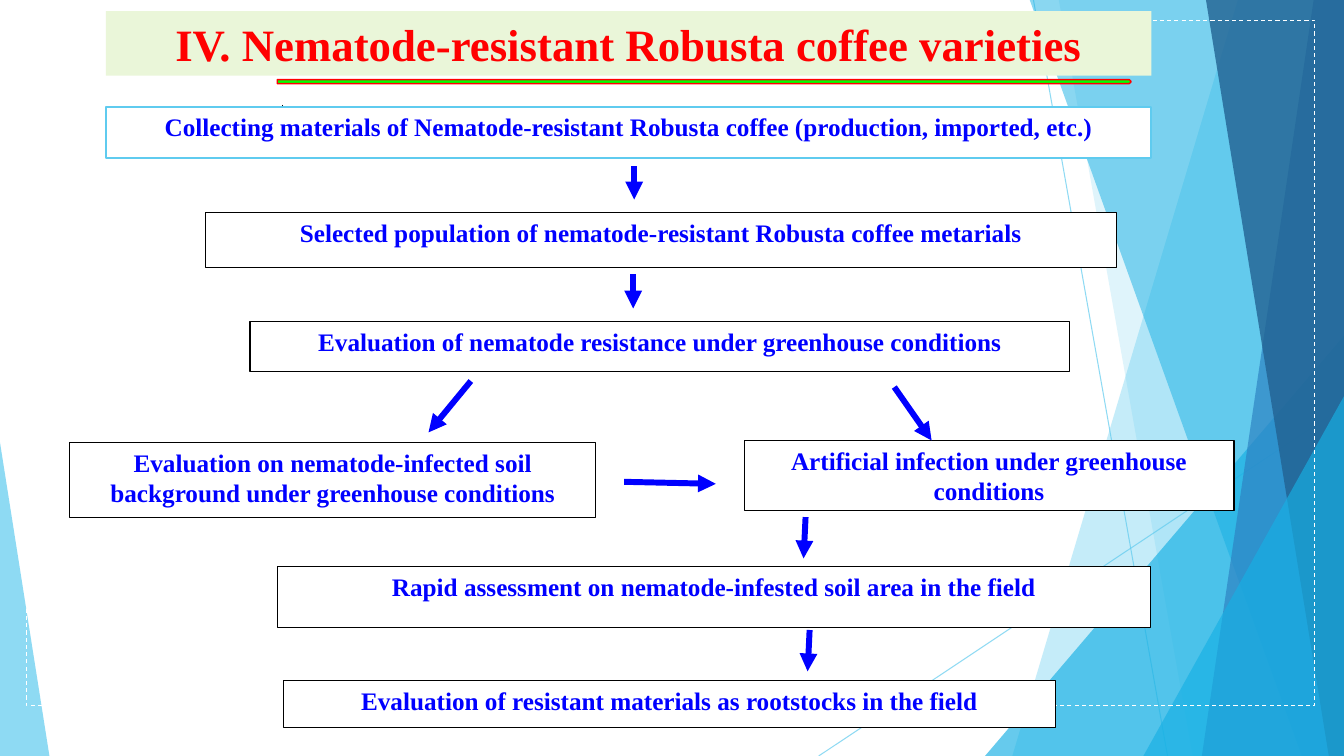
from dataclasses import dataclass
from typing import Optional

import lxml.etree
import pptx
import pptx.dml.color
import pptx.enum.dml
import pptx.enum.shapes
import pptx.enum.text
import pptx.oxml.ns
import pptx.util

Inches = pptx.util.Inches
SHAPES = pptx.enum.shapes.MSO_SHAPE
ANCHOR = pptx.enum.text.MSO_ANCHOR

COLORS = {
    "white": "FFFFFF", "black": "000000", "red": "FF0000", "green": "00FF00",
    "blue": "0000FF", "pale_green": "EAF6D9", "sky": "5FCBEF",
    "cyan": "17B0E4", "steel": "2E83C3", "navy": "226292",
}
WIDTH, HEIGHT = 13.33, 7.5
TOP = -0.01  # the facets start just above the slide


@dataclass(frozen=True)
class Facet:
    """Band reaching the right edge, with a slanting left side."""
    top_x: float
    bottom_x: float
    color: str
    alpha: int


@dataclass(frozen=True)
class Triangle:
    left: float
    top: float
    width: float
    apex: float
    color: str
    alpha: int


@dataclass(frozen=True)
class Step:
    text: str
    left: float
    top: float
    width: float
    height: float
    line: str = "black"
    line_width: float = 0.75


@dataclass(frozen=True)
class Line:
    x1: float
    y1: float
    x2: float
    y2: float
    color: str = "blue"
    width: float = 4.25
    alpha: int = 100
    arrow: bool = True


BACK_LINES = [
    Line(10.25, 0, 11.58, HEIGHT, "sky", 0.75, 70, False),
    Line(WIDTH, 4.03, 8.12, HEIGHT, "sky", 0.75, 70, False),
]
BACKDROP = [
    Facet(12.28, 10.04, "sky", 36),
    Facet(10.5, 11.83, "sky", 20),
    Triangle(9.77, 3.33, 3.56, 1, "cyan", 66),
    Facet(10.21, 12.91, "cyan", 50),
    Facet(13.03, 11.92, "steel", 70),
    Facet(11.96, 13.18, "navy", 80),
    Triangle(11.34, 3.93, 1.99, 1, "cyan", 66),
    Triangle(0, 4.39, 0.49, 0, "sky", 70),
]
STEPS = [
    Step("Collecting materials of Nematode-resistant Robusta coffee (production, imported, etc.)",
         1.05, 1.06, 10.37, 0.51, "sky", 1.5),
    Step("Selected population of nematode-resistant Robusta coffee metarials", 2.04, 2.11, 9.03, 0.54),
    Step("Evaluation of nematode resistance under greenhouse conditions", 2.48, 3.19, 8.13, 0.5),
    Step("Evaluation on nematode-infected soil background under greenhouse conditions",
         0.69, 4.39, 5.22, 0.74),
    Step("Artificial infection under greenhouse conditions", 7.38, 4.37, 4.86, 0.69),
    Step("Rapid assessment on nematode-infested soil area in the field", 2.75, 5.62, 8.66, 0.61),
    Step("Evaluation of resistant materials as rootstocks in the field", 2.81, 6.75, 7.66, 0.47),
]
THIN_ARROW = Line(2.8, 1.04, 2.8, 1.37, "black", 0.75)
ARROWS = [
    Line(6.29, 1.65, 6.29, 1.98),
    Line(6.28, 2.72, 6.28, 3.06),
    Line(4.67, 3.78, 4.25, 4.29),
    Line(8.87, 3.84, 9.24, 4.37),
    Line(6.19, 4.78, 7.1, 4.8),
    Line(7.99, 5.13, 7.97, 5.54),
    Line(8.03, 6.25, 8.01, 6.66),
]


def rgb(name: str) -> pptx.dml.color.RGBColor:
    return pptx.dml.color.RGBColor.from_string(COLORS[name])


def set_alpha(element, percent: int) -> None:
    """Make the first solid colour inside the element see-through."""
    color = next(element.iter(pptx.oxml.ns.qn("a:srgbClr")))
    lxml.etree.SubElement(color, pptx.oxml.ns.qn("a:alpha"), val=str(percent * 1000))


def paint(sp, fill: Optional[str] = None, alpha: int = 100,
          line: Optional[str] = None, width: float = 0.75) -> None:
    sp.shadow.inherit = False
    if fill:
        sp.fill.solid()
        sp.fill.fore_color.rgb = rgb(fill)
        if alpha < 100:
            set_alpha(sp.element.spPr, alpha)
    else:
        sp.fill.background()
    if line:
        sp.line.color.rgb = rgb(line)
        sp.line.width = pptx.util.Pt(width)
    else:
        sp.line.fill.background()


def write_text(sp, text: str, *, size: float = 18, color: str = "blue",
               anchor: ANCHOR = ANCHOR.TOP) -> None:
    tf = sp.text_frame
    tf.word_wrap = True
    tf.auto_size = pptx.enum.text.MSO_AUTO_SIZE.NONE
    tf.vertical_anchor = anchor
    p = tf.paragraphs[0]
    p.alignment = pptx.enum.text.PP_ALIGN.CENTER
    r = p.add_run()
    r.text = text
    r.font.name = "Times New Roman"
    r.font.size = pptx.util.Pt(size)
    r.font.bold = True
    r.font.color.rgb = rgb(color)


def add_box(slide, kind: SHAPES, left: float, top: float, width: float, height: float):
    return slide.shapes.add_shape(kind, *map(Inches, (left, top, width, height)))


def add_facet(slide, facet: Facet) -> None:
    corners = [(facet.top_x, TOP), (WIDTH, TOP), (WIDTH, HEIGHT), (facet.bottom_x, HEIGHT)]
    points = [(Inches(x), Inches(y)) for x, y in corners]
    builder = slide.shapes.build_freeform(*points[0])
    builder.add_line_segments(points[1:], close=True)
    paint(builder.convert_to_shape(), facet.color, facet.alpha)


def add_triangle(slide, tri: Triangle) -> None:
    sp = add_box(slide, SHAPES.ISOSCELES_TRIANGLE, tri.left, tri.top, tri.width, HEIGHT - tri.top)
    sp.adjustments[0] = tri.apex
    paint(sp, tri.color, tri.alpha)


def add_line(slide, line: Line) -> None:
    ends = map(Inches, (line.x1, line.y1, line.x2, line.y2))
    cx = slide.shapes.add_connector(pptx.enum.shapes.MSO_CONNECTOR.STRAIGHT, *ends)
    cx.line.color.rgb = rgb(line.color)
    cx.line.width = pptx.util.Pt(line.width)
    sp_pr = cx.element.spPr
    if line.alpha < 100:
        set_alpha(sp_pr, line.alpha)
    if line.arrow:
        ln = sp_pr.find(pptx.oxml.ns.qn("a:ln"))
        lxml.etree.SubElement(ln, pptx.oxml.ns.qn("a:tailEnd"), type="triangle")
    lxml.etree.SubElement(sp_pr, pptx.oxml.ns.qn("a:effectLst"))


def add_step(slide, step: Step) -> None:
    sp = add_box(slide, SHAPES.RECTANGLE, step.left, step.top, step.width, step.height)
    paint(sp, "white", line=step.line, width=step.line_width)
    write_text(sp, step.text)


def main() -> None:
    prs = pptx.Presentation()
    prs.slide_width, prs.slide_height = Inches(WIDTH), Inches(HEIGHT)
    slide = prs.slides.add_slide(prs.slide_layouts[5])

    # Backdrop
    for line in BACK_LINES:
        add_line(slide, line)
    for part in BACKDROP:
        if isinstance(part, Facet):
            add_facet(slide, part)
        else:
            add_triangle(slide, part)
    frame = add_box(slide, SHAPES.RECTANGLE, 0.26, 0.2, 12.78, 6.8)
    paint(frame, line="white")
    frame.line.dash_style = pptx.enum.dml.MSO_LINE.DASH

    # Title, raised above the backdrop, and its underline
    underline = add_box(slide, SHAPES.PENTAGON, 2.75, 0.79, 8.47, 0.04)
    paint(underline, "green", line="red", width=1)
    title = slide.shapes.title
    title.left, title.top, title.width, title.height = map(Inches, (1.05, 0.11, 10.37, 0.64))
    title.fill.solid()
    title.fill.fore_color.rgb = rgb("pale_green")
    write_text(title, "IV. Nematode-resistant Robusta coffee varieties",
               size=32, color="red", anchor=ANCHOR.MIDDLE)
    slide.shapes.element.append(title.element)

    # Flow chart
    add_line(slide, THIN_ARROW)
    for step in STEPS:
        add_step(slide, step)
    for arrow in ARROWS:
        add_line(slide, arrow)

    prs.save("out.pptx")


if __name__ == "__main__":
    main()
